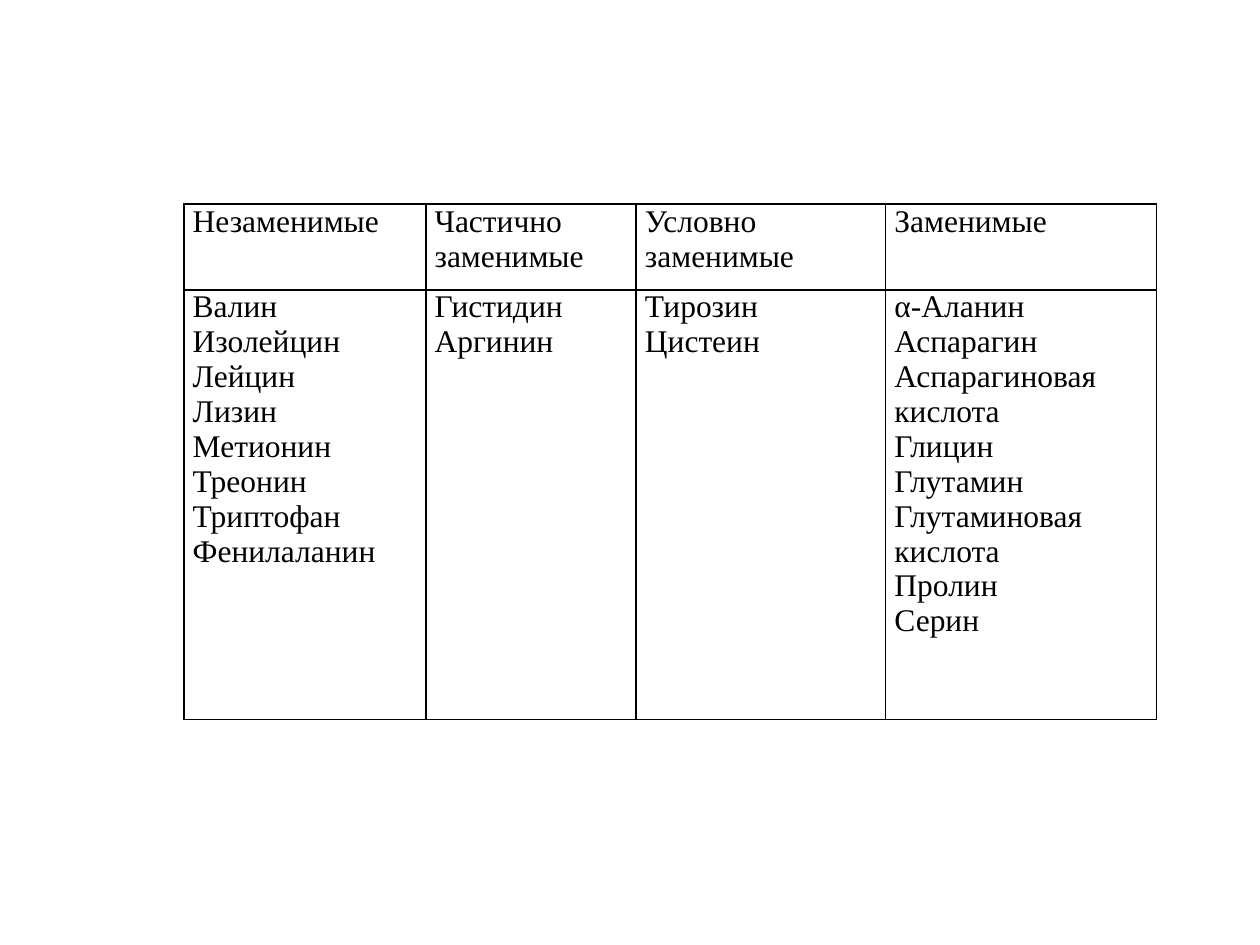
from dataclasses import dataclass

from lxml.etree import SubElement
from pptx import Presentation
from pptx.dml.color import RGBColor
from pptx.enum.text import PP_ALIGN
from pptx.oxml.ns import qn
from pptx.util import Inches, Pt


@dataclass(frozen=True)
class Theme:
    font: str = "Times New Roman"
    size: int = 18
    ink: str = "000000"
    border: int = 1


theme = Theme()

amino_acids = {
    "Незаменимые": ["Валин", "Изолейцин", "Лейцин", "Лизин", "Метионин",
                    "Треонин", "Триптофан", "Фенилаланин"],
    "Частично\nзаменимые": ["Гистидин", "Аргинин"],
    "Условно\nзаменимые": ["Тирозин", "Цистеин"],
    "Заменимые": ["α-Аланин", "Аспарагин", "Аспарагиновая", "кислота", "Глицин",
                  "Глутамин", "Глутаминовая", "кислота", "Пролин", "Серин"],
}
column_widths = [1.92, 1.67, 1.98, 2.15]
row_heights = [0.68, 3.41]


def add_borders(cell):
    properties = cell._tc.get_or_add_tcPr()
    for side in ("lnL", "lnR", "lnT", "lnB"):
        line = SubElement(properties, qn(f"a:{side}"), w=str(Pt(theme.border)))
        fill = SubElement(line, qn("a:solidFill"))
        SubElement(fill, qn("a:srgbClr"), val=theme.ink)


def fill_cell(cell, text):
    add_borders(cell)
    cell.fill.background()
    cell.margin_left = cell.margin_right = Inches(0.07)
    cell.margin_top = cell.margin_bottom = 0
    cell.text_frame.text = text
    for para in cell.text_frame.paragraphs:
        para.alignment = PP_ALIGN.JUSTIFY
        for span in para.runs:
            span.font.name = theme.font
            span.font.size = Pt(theme.size)
            span.font.bold = False
            span.font.color.rgb = RGBColor.from_string(theme.ink)


deck = Presentation()
deck.slide_width, deck.slide_height = Inches(10), Inches(7.5)
page = deck.slides.add_slide(deck.slide_layouts[6])

table = page.shapes.add_table(
    len(row_heights), len(column_widths), Inches(1.46), Inches(1.62),
    Inches(sum(column_widths)), Inches(sum(row_heights))).table
table.first_row = table.horz_banding = False

for row, height in zip(table.rows, row_heights):
    row.height = Inches(height)
for column, width in zip(table.columns, column_widths):
    column.width = Inches(width)

for index, (group, names) in enumerate(amino_acids.items()):
    fill_cell(table.cell(0, index), group)
    fill_cell(table.cell(1, index), "\n".join(names))

deck.save("out.pptx")
